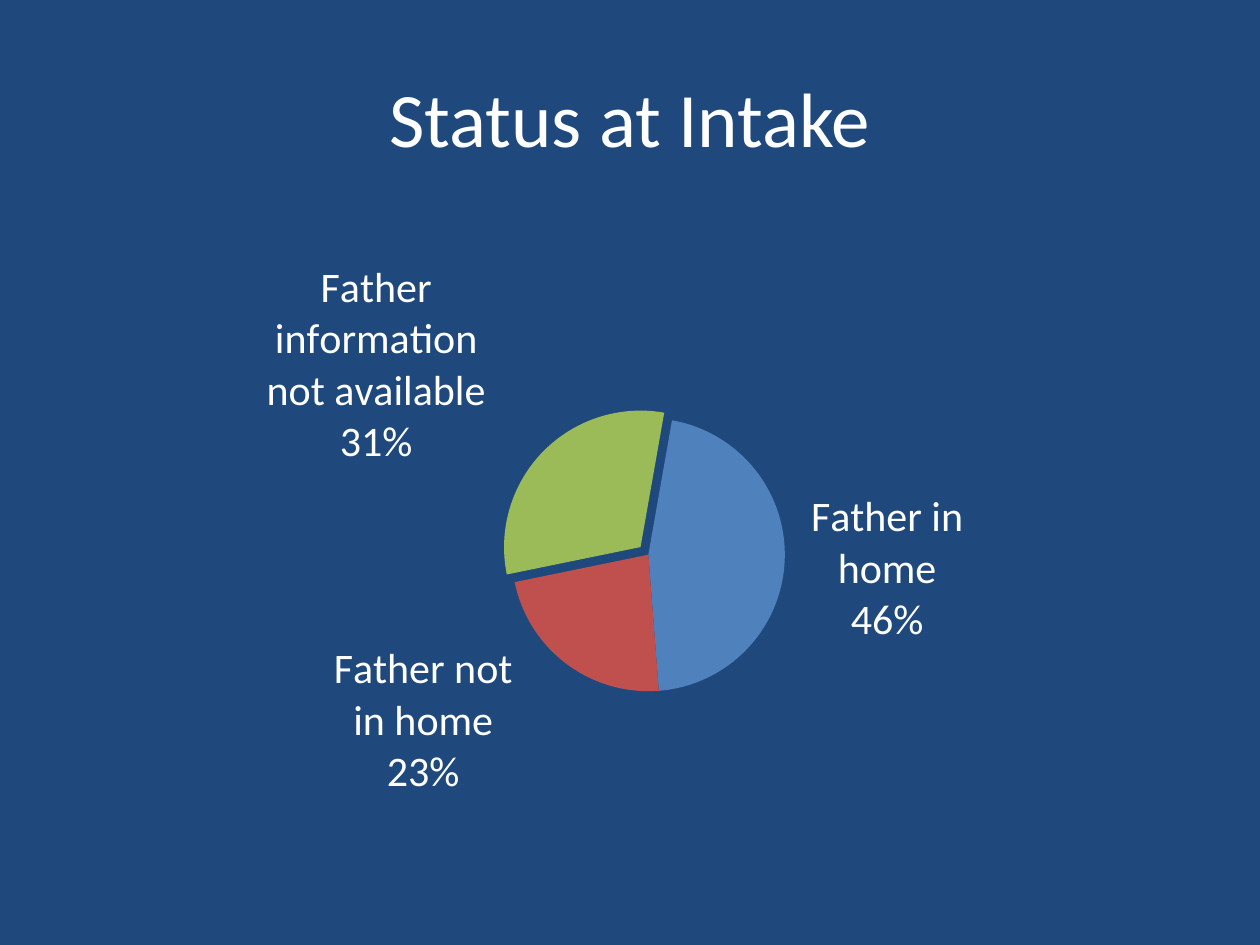
from copy import deepcopy

from lxml import etree
from pptx import Presentation
from pptx.chart.data import CategoryChartData
from pptx.dml.color import RGBColor
from pptx.enum.chart import XL_CHART_TYPE, XL_LABEL_POSITION
from pptx.enum.text import MSO_ANCHOR, PP_ALIGN
from pptx.oxml.ns import qn
from pptx.util import Inches, Pt

PIE = XL_CHART_TYPE.PIE
BEST_FIT = XL_LABEL_POSITION.BEST_FIT
MIDDLE = MSO_ANCHOR.MIDDLE
CENTER = PP_ALIGN.CENTER

HEADING = "Status at Intake"
STATUSES = [
    ("Father in home", 46, "4F81BD", (0.15, 0.06)),
    ("Father not in home", 23, "C0504D", (-0.39, -0.2)),
    ("Father information not available", 31, "9BBB59", (-0.41, 0.17)),
]
EXPLODED_STATUS = 2
EXPLOSION = 8
START_ANGLE = 10

THEME = {
    "font": "Calibri",
    "background": RGBColor.from_string("1F497D"),
    "text": RGBColor.from_string("FFFFFF"),
    "heading_size": Pt(44),
    "label_size": Pt(24),
}
MARGIN, CONTENT_WIDTH = Inches(0.5), Inches(9)
PIE_HEIGHT = Inches(4.95)


def style_font(font, size):
    font.name = THEME["font"]
    font.size = size
    font.color.rgb = THEME["text"]


def add_heading(slide):
    heading = slide.shapes.add_textbox(MARGIN, Inches(0.3), CONTENT_WIDTH, Inches(1.25))
    frame = heading.text_frame
    frame.word_wrap = True
    frame.vertical_anchor = MIDDLE
    frame.text = HEADING
    paragraph = frame.paragraphs[0]
    paragraph.alignment = CENTER
    style_font(paragraph.runs[0].font, THEME["heading_size"])


def add_child(parent, tag, **attributes):
    return etree.SubElement(parent, qn(tag), **attributes)


def shift_labels(labels):
    shared = [child for child in labels if child.tag != qn("c:showLeaderLines")]
    for index, (_, _, _, (right, down)) in enumerate(STATUSES):
        label = etree.Element(qn("c:dLbl"))
        add_child(label, "c:idx", val=str(index))
        layout = add_child(add_child(label, "c:layout"), "c:manualLayout")
        add_child(layout, "c:x", val=str(Inches(right) / CONTENT_WIDTH))
        add_child(layout, "c:y", val=str(Inches(down) / PIE_HEIGHT))
        label.extend([deepcopy(child) for child in shared])
        labels.insert(index, label)


def add_status_pie(slide):
    intake = CategoryChartData(number_format="General")
    intake.categories = [status for status, *_ in STATUSES]
    intake.add_series("Series 1", [share for _, share, *_ in STATUSES])
    chart = slide.shapes.add_chart(
        PIE, MARGIN, Inches(1.75), CONTENT_WIDTH, PIE_HEIGHT, intake
    ).chart
    chart.has_title = False
    chart.has_legend = False
    style_font(chart.font, THEME["label_size"])

    plot = chart.plots[0]
    plot.vary_by_categories = True
    shares = plot.series[0]
    for index, (_, _, color, _) in enumerate(STATUSES):
        fill = shares.points[index].format.fill
        fill.solid()
        fill.fore_color.rgb = RGBColor.from_string(color)

    exploded = shares._element.findall(qn("c:dPt"))[EXPLODED_STATUS]
    explosion = etree.Element(qn("c:explosion"), val=str(EXPLOSION))
    exploded.find(qn("c:spPr")).addprevious(explosion)

    labels = shares.data_labels
    labels.show_value = False
    labels.show_category_name = True
    labels.show_percentage = True
    labels.number_format = "0%"
    labels.number_format_is_linked = False
    labels.position = BEST_FIT
    style_font(labels.font, THEME["label_size"])
    separator = etree.Element(qn("c:separator"))
    separator.text = "\n"
    last_flag = labels._element.find(qn("c:showBubbleSize"))
    if last_flag is None:
        last_flag = labels._element.find(qn("c:showPercent"))
    last_flag.addnext(separator)
    leader_lines = labels._element.find(qn("c:showLeaderLines"))
    if leader_lines is None:
        leader_lines = add_child(labels._element, "c:showLeaderLines")
    leader_lines.set("val", "0")
    shift_labels(labels._element)

    pie = plot._element
    angle = pie.find(qn("c:firstSliceAng"))
    if angle is None:
        angle = add_child(pie, "c:firstSliceAng")
    angle.set("val", str(START_ANGLE))


def main():
    deck = Presentation()
    deck.slide_width, deck.slide_height = Inches(10), Inches(7.5)
    slide = deck.slides.add_slide(deck.slide_layouts[6])
    slide.background.fill.solid()
    slide.background.fill.fore_color.rgb = THEME["background"]
    add_heading(slide)
    add_status_pie(slide)
    deck.save("out.pptx")


if __name__ == "__main__":
    main()
